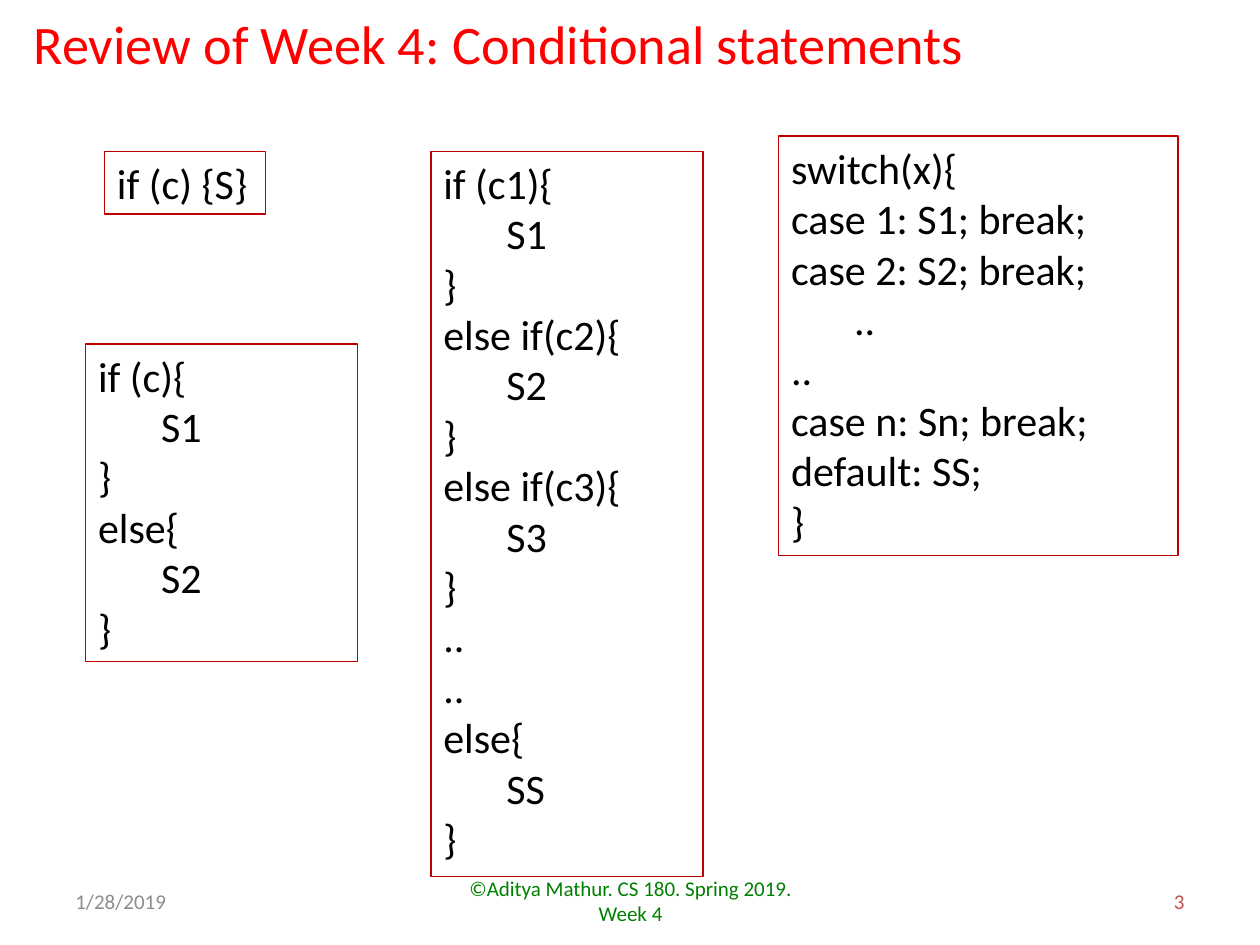
from dataclasses import dataclass

import pptx
import pptx.dml.color
import pptx.enum.shapes
import pptx.enum.text
import pptx.oxml
import pptx.oxml.ns
import pptx.util

SCALE = 9144
ALIGN = pptx.enum.text.PP_ALIGN
ANCHOR = pptx.enum.text.MSO_ANCHOR
FIT = pptx.enum.text.MSO_AUTO_SIZE


@dataclass(frozen=True)
class Theme:
    font: str = "Calibri"
    title: str = "FF0000"
    date: str = "8C8C8C"
    credit: str = "008000"
    number: str = "C0504D"
    code: str = "000000"
    border: str = "C00000"
    head_size: int = 31
    code_size: int = 24
    foot_size: int = 12
    line: float = 0.75
    tab: int = 50


@dataclass(frozen=True)
class Box:
    left: int
    top: int
    width: int
    height: int


@dataclass(frozen=True)
class Label:
    box: Box
    text: str
    size: int
    color: str
    align: ALIGN = ALIGN.LEFT
    anchor: ANCHOR = ANCHOR.MIDDLE
    fit: FIT = FIT.NONE


@dataclass(frozen=True)
class Code:
    box: Box
    text: str
    wrap: bool = True


THEME = Theme()


def px(count: int) -> int:
    return pptx.util.Emu(count * SCALE)


def place(box: Box) -> tuple[int, ...]:
    return tuple(px(n) for n in (box.left, box.top, box.width, box.height))


def paint(text: str) -> pptx.dml.color.RGBColor:
    return pptx.dml.color.RGBColor.from_string(text)


def style(para, size: int, color: str, align: ALIGN) -> None:
    para.alignment = align
    for run in para.runs:
        run.font.name = THEME.font
        run.font.size = pptx.util.Pt(size)
        run.font.color.rgb = paint(color)


def add_tab(para) -> None:
    tabs = pptx.oxml.parse_xml(
        f'<a:tabLst {pptx.oxml.ns.nsdecls("a")}>'
        f'<a:tab pos="{px(THEME.tab)}" algn="l"/></a:tabLst>'
    )
    para._p.get_or_add_pPr().append(tabs)


def draw_label(slide, label: Label) -> None:
    frame = slide.shapes.add_textbox(*place(label.box)).text_frame
    frame.text = label.text
    frame.word_wrap = True
    frame.auto_size = label.fit
    frame.vertical_anchor = label.anchor
    style(frame.paragraphs[0], label.size, label.color, label.align)


def draw_code(slide, code: Code) -> None:
    kind = pptx.enum.shapes.MSO_SHAPE.RECTANGLE
    shape = slide.shapes.add_shape(kind, *place(code.box))
    shape.shadow.inherit = False
    shape.fill.background()
    shape.line.color.rgb = paint(THEME.border)
    shape.line.width = pptx.util.Pt(THEME.line)
    frame = shape.text_frame
    frame.text = code.text
    frame.word_wrap = code.wrap
    frame.auto_size = FIT.SHAPE_TO_FIT_TEXT
    frame.vertical_anchor = ANCHOR.TOP
    for para in frame.paragraphs:
        if para.text.startswith("\t"):
            add_tab(para)
        style(para, THEME.code_size, THEME.code, ALIGN.LEFT)


LABELS = (
    Label(Box(17, 3, 836, 62), "Review of Week 4: Conditional statements",
          THEME.head_size, THEME.title, anchor=ANCHOR.TOP, fit=FIT.SHAPE_TO_FIT_TEXT),
    Label(Box(50, 695, 233, 40), "1/28/2019", THEME.foot_size, THEME.date),
    Label(Box(342, 695, 317, 40), "©Aditya Mathur. CS 180. Spring 2019. Week 4",
          THEME.foot_size, THEME.credit, ALIGN.CENTER),
    Label(Box(717, 695, 233, 40), "3", THEME.foot_size, THEME.number, ALIGN.RIGHT),
)

CODES = (
    Code(Box(83, 120, 128, 50), "if (c) {S}", wrap=False),
    Code(Box(68, 273, 216, 252), "if (c){\n\tS1\n}\nelse{\n\tS2\n}"),
    Code(Box(342, 120, 216, 576),
         "if (c1){\n\tS1\n}\nelse if(c2){\n\tS2\n}\nelse if(c3){\n\tS3\n}\n"
         "..\n..\nelse{\n\tSS\n}"),
    Code(Box(618, 108, 317, 333),
         "switch(x){\ncase 1: S1; break;\ncase 2: S2; break;\n\t..\n..\n"
         "case n: Sn; break;\ndefault: SS;\n}"),
)


def main() -> None:
    deck = pptx.Presentation()
    deck.slide_width, deck.slide_height = px(1000), px(750)
    slide = deck.slides.add_slide(deck.slide_layouts[6])
    for label in LABELS:
        draw_label(slide, label)
    for code in CODES:
        draw_code(slide, code)
    deck.save("out.pptx")


if __name__ == "__main__":
    main()
